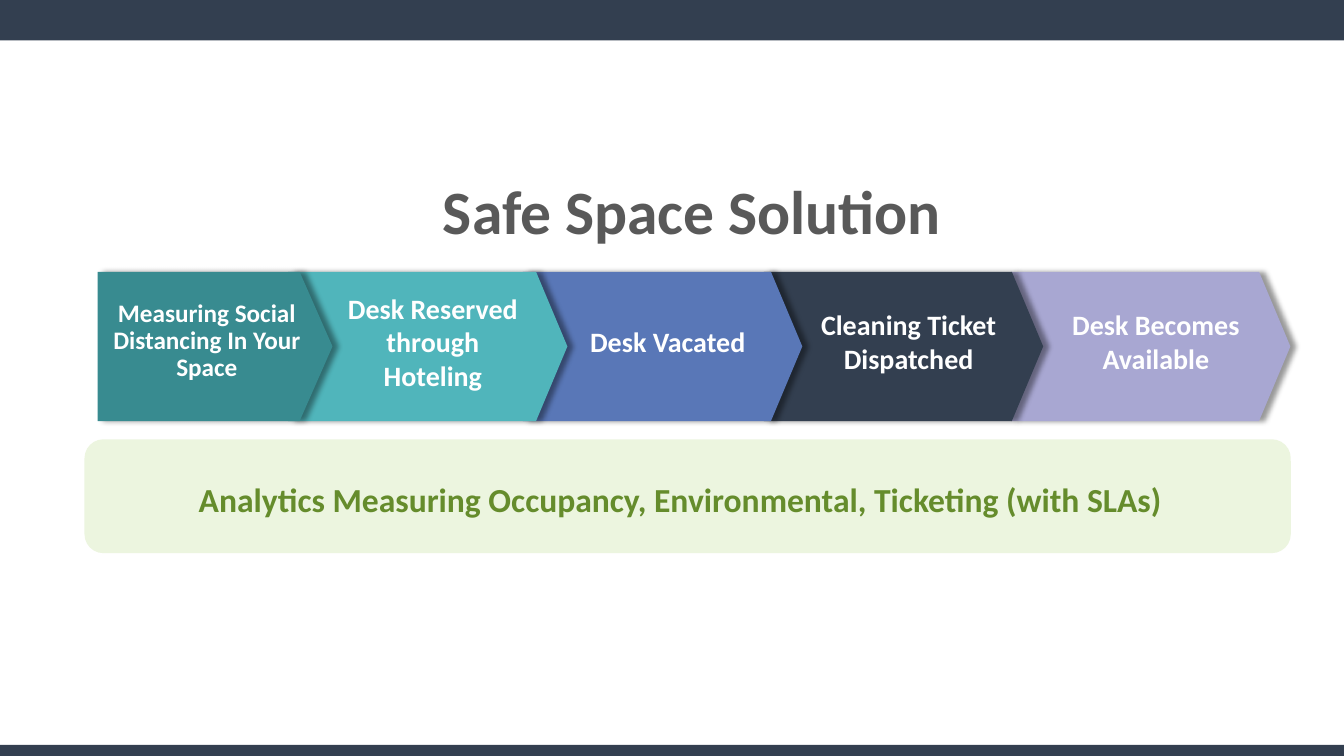
from dataclasses import dataclass

from lxml.etree import SubElement
from pptx import Presentation
from pptx.dml.color import RGBColor
from pptx.enum.shapes import MSO_SHAPE as Preset
from pptx.enum.text import MSO_ANCHOR as Anchor, MSO_AUTO_SIZE as AutoSize, PP_ALIGN as Align
from pptx.oxml.ns import qn
from pptx.util import Cm, Pt


@dataclass(frozen=True)
class Theme:
    """Colours and type sizes of the slide."""
    font: str = "Calibri"
    slate: str = "333F50"
    teal: str = "388B90"
    aqua: str = "50B5BB"
    blue: str = "5977B7"
    lilac: str = "A8A7D2"
    pale_green: str = "ECF5DF"
    green: str = "658C2C"
    grey: str = "595959"
    white: str = "FFFFFF"
    black: str = "000000"
    title: int = 44
    analytics: int = 24
    step: int = 20
    first_step: int = 18


THEME = Theme()
STEP_TOP, STEP_HEIGHT = 6.85, 3.76


def add_block(slide, preset, box, color):
    """Add a flat filled shape without outline; box is in centimetres."""
    block = slide.shapes.add_shape(preset, *map(Cm, box))
    block.shadow.inherit = False
    block.fill.solid()
    block.fill.fore_color.rgb = RGBColor.from_string(color)
    block.line.fill.background()
    return block


def cast_shadow(block):
    """Give a block a soft shadow to its right."""
    effects = block.element.spPr.find(qn("a:effectLst"))
    shadow = SubElement(effects, qn("a:outerShdw"), blurRad=str(Pt(4)), dist=str(Pt(4)),
                        dir="0", algn="l", rotWithShape="0")
    tint = SubElement(shadow, qn("a:srgbClr"), val=THEME.black)
    SubElement(tint, qn("a:alpha"), val="40000")


def write(frame, text, size, color):
    """Write one centred bold paragraph and return it."""
    frame.word_wrap = True
    paragraph = frame.paragraphs[0]
    paragraph.alignment = Align.CENTER
    run = paragraph.add_run()
    run.text = text
    run.font.name = THEME.font
    run.font.size = Pt(size)
    run.font.bold = True
    run.font.color.rgb = RGBColor.from_string(color)
    return paragraph


def add_step(slide, preset, left, width, point, color, text, size, inset):
    """Add one arrow of the process and return its paragraph."""
    step = add_block(slide, preset, (left, STEP_TOP, width, STEP_HEIGHT), color)
    step.adjustments[0] = point
    cast_shadow(step)
    frame = step.text_frame
    frame.vertical_anchor = Anchor.MIDDLE
    frame.margin_left, frame.margin_top = Cm(inset), Cm(0)
    frame.margin_right = frame.margin_bottom = Cm(0.25)
    return write(frame, text, size, THEME.white)


def add_label(slide, box, text, size, color):
    """Add a text box that grows with its text."""
    label = slide.shapes.add_textbox(*map(Cm, box))
    write(label.text_frame, text, size, color)
    label.text_frame.auto_size = AutoSize.SHAPE_TO_FIT_TEXT


def main():
    """Build the slide and save it."""
    deck = Presentation()
    deck.slide_width, deck.slide_height = Cm(33.87), Cm(19.05)
    slide = deck.slides.add_slide(deck.slide_layouts[6])

    for top, height in ((18.77, 0.28), (0, 1.02)):
        add_block(slide, Preset.RECTANGLE, (0, top, 33.87, height), THEME.slate)

    later_steps = (
        (25.48, THEME.lilac, "Desk Becomes Available"),
        (19.25, THEME.slate, "Cleaning Ticket Dispatched"),
        (13.18, THEME.blue, "Desk Vacated"),
        (7.26, THEME.aqua, "Desk Reserved through Hoteling"),
    )
    for left, color, text in later_steps:
        add_step(slide, Preset.CHEVRON, left, 7.04, 0.21, color, text, THEME.step, 0.51)
    first = add_step(slide, Preset.PENTAGON, 2.46, 5.92, 0.22, THEME.teal,
                     "Measuring Social Distancing In Your Space", THEME.first_step, 0.25)
    first.line_spacing = 0.9

    add_block(slide, Preset.ROUNDED_RECTANGLE, (2.13, 11.07, 30.4, 2.87), THEME.pale_green)
    add_label(slide, (2.54, 11.94, 29.21, 1.27),
              "Analytics Measuring Occupancy, Environmental, Ticketing (with SLAs)",
              THEME.analytics, THEME.green)
    add_label(slide, (8.94, 4.24, 17.02, 2.13), "Safe Space Solution", THEME.title, THEME.grey)

    deck.save("out.pptx")


if __name__ == "__main__":
    main()
